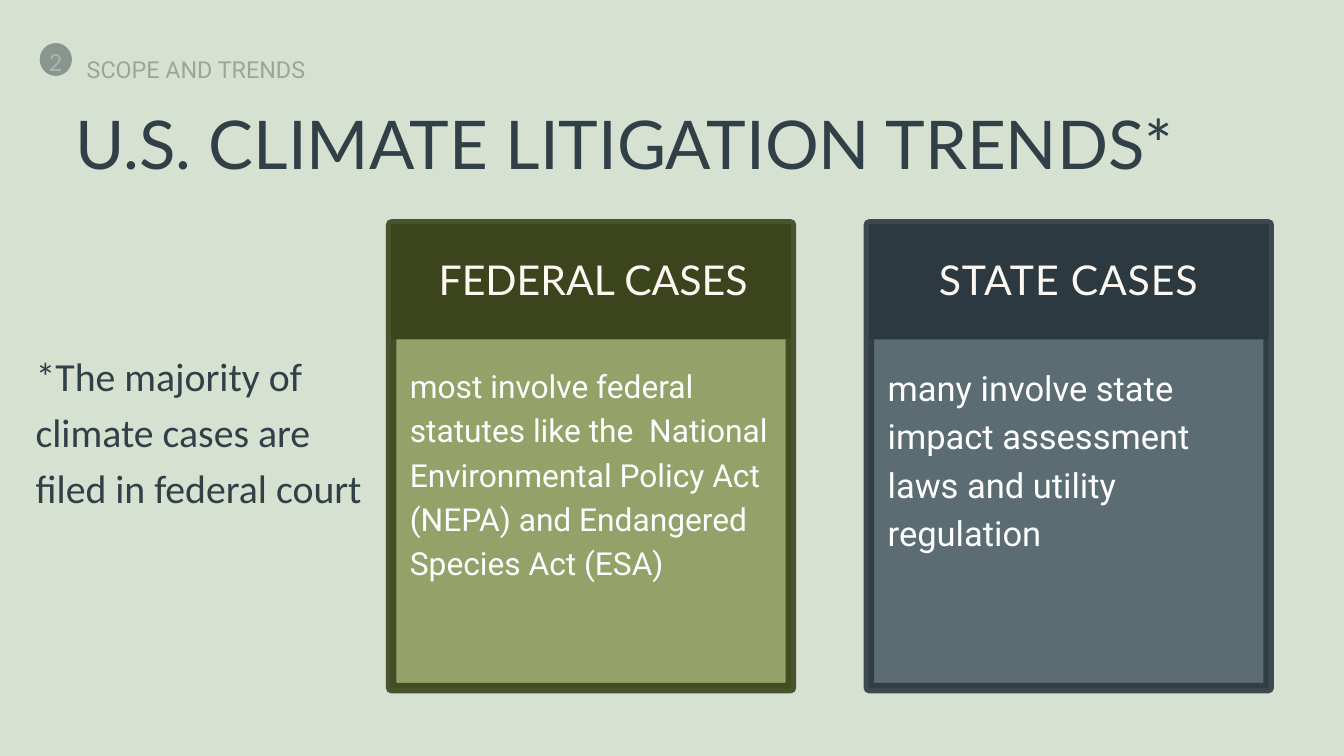
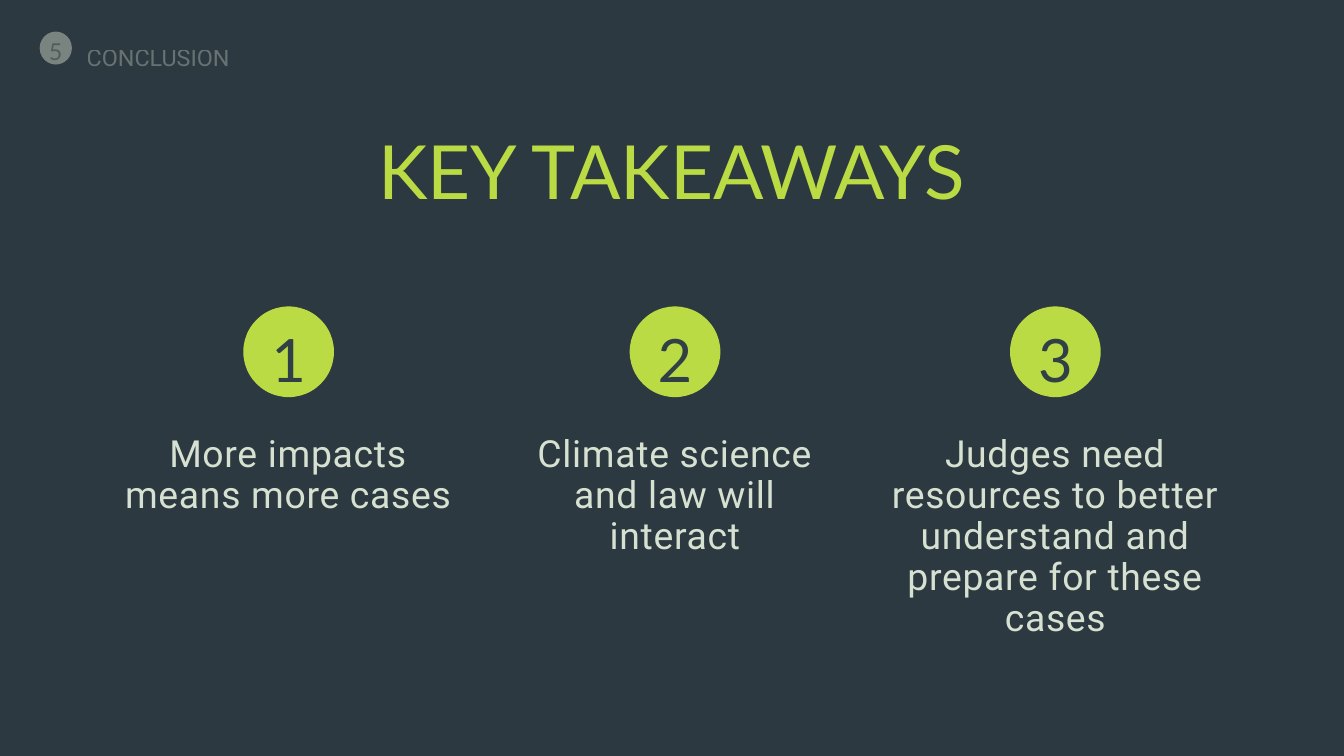
from lxml import etree
from pptx import Presentation
from pptx.dml.color import RGBColor
from pptx.enum import shapes, text
from pptx.oxml.ns import qn
from pptx.util import Inches, Pt

SAGE = RGBColor(0xD6, 0xE1, 0xD1)
SLATE = RGBColor(0x2D, 0x39, 0x40)
INK = RGBColor(0x31, 0x3F, 0x47)
STEEL = RGBColor(0x4F, 0x60, 0x69)
MOSS = RGBColor(0x3B, 0x44, 0x1D)
OLIVE = RGBColor(0x8D, 0x9B, 0x5D)
LIME = RGBColor(0xBA, 0xDB, 0x43)
CREAM = RGBColor(0xFF, 0xF9, 0xF3)
WHITE = RGBColor(0xFF, 0xFF, 0xFF)
BLACK = RGBColor(0, 0, 0)
DUSK = RGBColor(0x11, 0x1F, 0x26)

LEFT, MID = text.PP_ALIGN.LEFT, text.PP_ALIGN.CENTER
RECT, OVAL = shapes.MSO_SHAPE.RECTANGLE, shapes.MSO_SHAPE.OVAL
DOT = 1.35


def fade(node, alpha):
    for color in node.iter(qn("a:srgbClr")):
        etree.SubElement(color, qn("a:alpha")).set("val", str(alpha * 1000))


def write(shape, words, size, color, lead, font="Lato", align=LEFT,
          track=0, alpha=100):
    frame = shape.text_frame
    frame.word_wrap = True
    frame.auto_size = text.MSO_AUTO_SIZE.NONE
    frame.vertical_anchor = text.MSO_ANCHOR.TOP
    frame.margin_left = frame.margin_right = 0
    frame.margin_top = frame.margin_bottom = 0
    para = frame.paragraphs[0]
    para.alignment = align
    para.line_spacing = Pt(lead)
    para.space_before = Pt(0)
    run = para.add_run()
    run.text = words
    run.font.name = font
    run.font.size = Pt(size)
    run.font.color.rgb = color
    if track:
        run._r.get_or_add_rPr().set("spc", str(round(track * 100)))
    if alpha < 100:
        fade(run._r, alpha)


def label(slide, box, words, size, color, lead, **style):
    shape = slide.shapes.add_textbox(*map(Inches, box))
    write(shape, words, size, color, lead, **style)


def block(slide, kind, box, fill, edge=None, alpha=100):
    shape = slide.shapes.add_shape(kind, *map(Inches, box))
    shape.shadow.inherit = False
    shape.fill.solid()
    shape.fill.fore_color.rgb = fill
    if edge is None:
        shape.line.fill.background()
    else:
        shape.line.color.rgb = edge
        shape.line.width = Pt(11.25)
    if alpha < 100:
        fade(shape._element.spPr, alpha)


def start(deck, back, title, box, size, color, align=LEFT):
    slide = deck.slides.add_slide(deck.slide_layouts[5])
    slide.background.fill.solid()
    slide.background.fill.fore_color.rgb = back
    head = slide.shapes.title
    head.left, head.top, head.width, head.height = map(Inches, box)
    write(head, title, size, color, size * 1.2, align=align)
    return slide


def marker(slide, top, digit, topic, fill, ink, tone, alpha):
    label(slide, (1.29, top - 0.1, 14.08, 0.57), topic, 25, tone, 50,
          font="Roboto", alpha=alpha)
    block(slide, OVAL, (0.59, top, 0.48, 0.49), fill, alpha=45)
    label(slide, (0.53, top - 0.05, 0.6, 0.49), digit, 25, ink, 39.2,
          align=MID, alpha=30)


def card(slide, left, top, name, body, size, fill, dark, shift, track=0):
    wide = 5.95
    block(slide, RECT, (left, top, wide, 6.9), fill, edge=dark, alpha=90)
    block(slide, RECT, (left, top, wide, 1.71), dark)
    label(slide, (left + shift, top + 0.32, 5.4, 1.2), name, 44, CREAM, 61.6,
          align=MID, track=track)
    label(slide, (left + 0.28, top + 2.02, 5.4, 3.9), body, size, WHITE,
          size * 1.4, font="Roboto")


def point(slide, left, top, digit, words, wide, shift):
    block(slide, OVAL, (left, top, DOT, DOT), LIME)
    label(slide, (left, top - 0.09, DOT, 1.31), digit, 64, INK, 100.5,
          align=MID)
    label(slide, (left + shift, top + 1.9, wide, 3.03), words, 40, SAGE, 44,
          font="Roboto", align=MID, track=0.8)


def trends(deck):
    slide = start(deck, SAGE, "U.S. CLIMATE LITIGATION TRENDS*",
                  (1.12, 1.52, 18.17, 1.19), 72, INK)
    label(slide, (0.53, 5.12, 5.01, 3.26),
          "*The majority of climate cases are filed in federal court",
          42.6, INK, 59.7, font="Calibri")
    card(slide, 12.93, 3.34, "STATE CASES",
         "many involve state impact assessment laws and utility regulation",
         37, STEEL, SLATE, 0.27, track=0.9)
    card(slide, 5.82, 3.34, "FEDERAL CASES",
         "most involve federal statutes like the  National Environmental "
         "Policy Act (NEPA) and Endangered Species Act (ESA)",
         34, OLIVE, MOSS, 0.31)
    marker(slide, 0.64, "2", "SCOPE AND TRENDS", SLATE, WHITE, DUSK, 30)


def closing(deck):
    slide = start(deck, SLATE, "KEY TAKEAWAYS", (4.06, 1.86, 11.88, 1.34),
                  80, LIME, align=MID)
    points = [
        (3.62, "More impacts means more cases", 5.2, -1.93),
        (9.37, "Climate science and law will interact", 5.01, -1.83),
        (15.03, "Judges need resources to better understand and prepare "
         "for these cases", 5.67, -2.16),
    ]
    for count, (left, words, wide, shift) in enumerate(points, 1):
        point(slide, left, 4.56, str(count), words, wide, shift)
    marker(slide, 0.47, "5", "CONCLUSION", SAGE, BLACK, SAGE, 34)


def main():
    deck = Presentation()
    deck.slide_width, deck.slide_height = Inches(20), Inches(11.25)
    trends(deck)
    closing(deck)
    deck.save("out.pptx")


if __name__ == "__main__":
    main()
